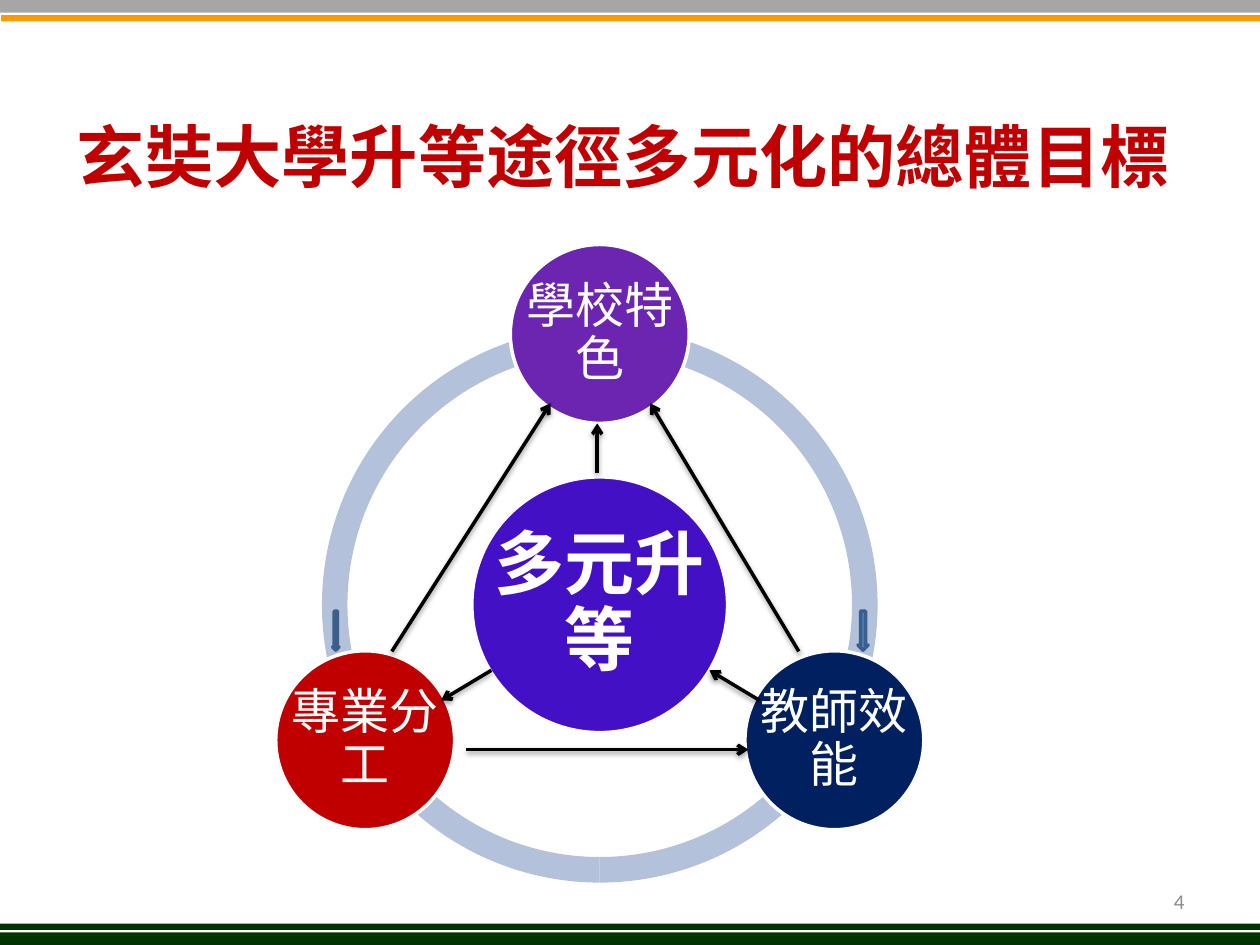
from math import cos, radians, sin

from lxml.etree import SubElement
from pptx import Presentation
from pptx.dml.color import RGBColor
from pptx.enum.shapes import MSO_CONNECTOR, MSO_SHAPE
from pptx.enum.text import MSO_ANCHOR, PP_ALIGN
from pptx.oxml import parse_xml
from pptx.oxml.ns import nsdecls, qn
from pptx.util import Inches, Pt

COLORS = {
    "white": "FFFFFF", "black": "000000", "gray": "A6A6A6", "orange": "FF9900",
    "green": "003300", "red": "C00000", "ring": "B3C1DB", "indigo": "4410C6",
    "purple": "6B25B1", "navy": "002060", "number": "8C8C8C",
    "blue": "4F81BD", "blue_line": "3A5F8C",
}
CJK = "Noto Sans CJK SC"
LATIN = "Calibri"
ARROW_SHADOW = (
    f'<a:effectLst {nsdecls("a")}>'
    '<a:outerShdw blurRad="39370" dist="20320" dir="5400000" rotWithShape="0">'
    '<a:srgbClr val="000000"><a:alpha val="38000"/></a:srgbClr>'
    '</a:outerShdw></a:effectLst>'
)


def color(name):
    return RGBColor.from_string(COLORS[name])


class Deck:
    def __init__(self, slide):
        self.s = slide

    def shape(self, kind, box, fill, line=None, adjustments=()):
        sp = self.s.shapes.add_shape(kind, *map(Inches, box))
        sp.shadow.inherit = False
        sp.fill.solid()
        sp.fill.fore_color.rgb = color(fill)
        if line:
            sp.line.color.rgb = color(line)
            sp.line.width = Pt(2)
        else:
            sp.line.fill.background()
        for i, value in enumerate(adjustments):
            sp.adjustments[i] = value
        return sp

    def fill_text(self, tf, text, size, fill, align, font=CJK, bold=False):
        tf.word_wrap = True
        tf.vertical_anchor = MSO_ANCHOR.MIDDLE
        p = tf.paragraphs[0]
        p.text = text
        p.alignment = align
        p.font.size = Pt(size)
        p.font.bold = bold
        p.font.color.rgb = color(fill)
        p.font.name = font
        SubElement(p.font._element, qn("a:ea"), typeface=CJK)
        return p

    def title(self, text, box):
        sp = self.s.shapes.title
        sp.left, sp.top, sp.width, sp.height = map(Inches, box)
        self.fill_text(sp.text_frame, text, 39, "red", PP_ALIGN.LEFT, bold=True)

    def text(self, text, box, size, fill, align, inset=None, **style):
        tf = self.s.shapes.add_textbox(*map(Inches, box)).text_frame
        if inset is not None:
            tf.margin_left = tf.margin_right = Inches(inset)
            tf.margin_top = tf.margin_bottom = Inches(inset)
        return self.fill_text(tf, text, size, fill, align, **style)

    def circle(self, text, x, y, diameter, fill, size, inset, **style):
        box = (x - diameter / 2, y - diameter / 2, diameter, diameter)
        self.shape(MSO_SHAPE.OVAL, box, fill, "white")
        p = self.text(text, box, size, "white", PP_ALIGN.CENTER, inset, **style)
        p.line_spacing = 0.9

    def arrow(self, start, end):
        cx = self.s.shapes.add_connector(
            MSO_CONNECTOR.STRAIGHT, *map(Inches, (*start, *end)))
        cx.line.color.rgb = color("black")
        cx.line.width = Pt(2)
        SubElement(cx.line._get_or_add_ln(), qn("a:tailEnd"), type="arrow")
        cx._element.spPr.append(parse_xml(ARROW_SHADOW))


def main():
    prs = Presentation()
    prs.slide_width, prs.slide_height = Inches(10), Inches(7.5)
    deck = Deck(prs.slides.add_slide(prs.slide_layouts[5]))

    for x, y, height, fill in (
        (0, 0, 0.1, "gray"), (0.01, 0.12, 0.05, "orange"),
        (-0.01, 7.4, 0.1, "green"), (-0.01, 7.33, 0.05, "green"),
    ):
        deck.shape(MSO_SHAPE.RECTANGLE, (x, y, 10.01, height), fill)

    deck.title("玄奘大學升等途徑多元化的總體目標", (0.51, 0.76, 9, 0.94))

    cx, cy, ring, orbit = 4.76, 4.8, 4.41, 2.15
    ring_box = (cx - ring / 2, cy - ring / 2, ring, ring)
    for start, end in ((90, 162), (18, 90), (162, 18)):
        deck.shape(MSO_SHAPE.BLOCK_ARC, ring_box, "ring",
                   adjustments=(start * 0.6, end * 0.6, 0.046))

    deck.circle("多元升等", cx, cy, 2.03, "indigo", 40, 0.06, font=LATIN, bold=True)
    for text, angle, fill in (
        ("學校特色", -90, "purple"), ("教師效能", 30, "navy"), ("專業分工", 150, "red"),
    ):
        deck.circle(text, cx + orbit * cos(radians(angle)),
                    cy + orbit * sin(radians(angle)), 1.42, fill, 28, 0.04)

    deck.text("4", (7.17, 6.95, 2.33, 0.4), 12, "number", PP_ALIGN.RIGHT, font=LATIN)

    for start, end in (
        ((3.9, 5.32), (3.5, 5.56)), ((3.7, 5.95), (5.94, 5.95)),
        ((3.11, 5.17), (4.37, 3.2)), ((6.34, 5.17), (5.16, 3.2)),
        ((6.03, 5.56), (5.63, 5.32)), ((4.74, 3.75), (4.74, 3.36)),
    ):
        deck.arrow(start, end)

    for x, width in ((6.81, 0.08), (2.64, 0.05)):
        deck.shape(MSO_SHAPE.DOWN_ARROW, (x, 4.85, width, 0.31), "blue", "blue_line")

    prs.save("out.pptx")


if __name__ == "__main__":
    main()
